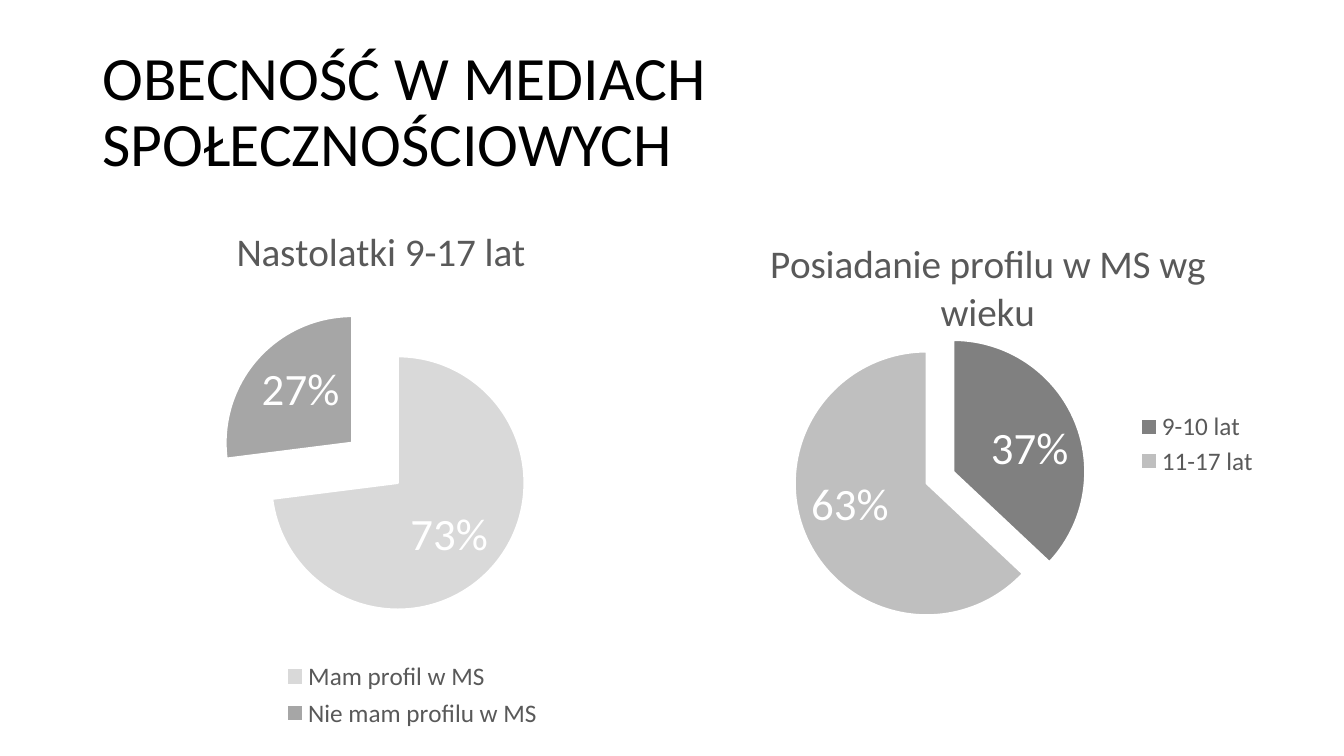
from lxml import etree
from pptx import Presentation
from pptx.chart.data import CategoryChartData
from pptx.dml.color import RGBColor
from pptx.enum import chart as ch, text
from pptx.oxml import ns
from pptx.util import Pt

FONT = "Calibri"
BLACK = RGBColor(0, 0, 0)
WHITE = RGBColor(255, 255, 255)
GREY = RGBColor(0x59, 0x59, 0x59)
PALE = RGBColor(0xD9, 0xD9, 0xD9)
MID = RGBColor(0xA6, 0xA6, 0xA6)
DARK = RGBColor(0x80, 0x80, 0x80)
SOFT = RGBColor(0xBF, 0xBF, 0xBF)


def style(font, size, color):
    font.name, font.size, font.bold = FONT, Pt(size), False
    font.color.rgb = color


def place(part, spot, after=None, inner=False):
    """Fix a chart part at spot, given as shares of the chart: x, y[, w, h]."""
    for old in part.findall(ns.qn("c:layout")):
        part.remove(old)
    layout = etree.Element(ns.qn("c:layout"))
    manual = etree.SubElement(layout, ns.qn("c:manualLayout"))
    rows = [("xMode", "edge"), ("yMode", "edge"), *zip("xywh", spot)]
    if inner:
        rows.insert(0, ("layoutTarget", "inner"))
    for tag, val in rows:
        etree.SubElement(manual, ns.qn("c:" + tag)).set("val", str(val))
    if after:
        part.find(ns.qn(after)).addnext(layout)
    else:
        part.insert(0, layout)


def add_title(slide, box, words):
    title = slide.shapes.title
    title.left, title.top, title.width, title.height = map(Pt, box)
    frame = title.text_frame
    frame.word_wrap = True
    frame.auto_size = text.MSO_AUTO_SIZE.NONE
    frame.vertical_anchor = text.MSO_ANCHOR.MIDDLE
    para = frame.paragraphs[0]
    para.alignment = text.PP_ALIGN.LEFT
    para.line_spacing = 0.9
    run = para.add_run()
    run.text = words
    style(run.font, 44, BLACK)


def add_pie(slide, box, head, parts, burst, spots):
    """Draw a pie of (name, share, colour) parts; spots place title, plot, legend."""
    data = CategoryChartData()
    data.categories = [name for name, _, _ in parts]
    data.add_series("Series 1", [share for _, share, _ in parts])
    chart = slide.shapes.add_chart(
        ch.XL_CHART_TYPE.PIE, *map(Pt, box), data).chart
    style(chart.font, 10, BLACK)

    chart.has_title = True
    run = chart.chart_title.text_frame.paragraphs[0].add_run()
    run.text = head
    style(run.font, 28, GREY)
    chart.chart_title.include_in_layout = False

    chart.has_legend = True
    legend = chart.legend
    legend.position = ch.XL_LEGEND_POSITION.RIGHT
    legend.include_in_layout = False
    style(legend.font, 18, GREY)

    plot = chart.plots[0]
    plot.vary_by_categories = True
    series = plot.series[0]
    for i, (_, _, color) in enumerate(parts):
        form = series.points[i].format
        form.fill.solid()
        form.fill.fore_color.rgb = color
        form.line.color.rgb = WHITE
        form.line.width = Pt(1.5)
    gap = etree.Element(ns.qn("c:explosion"))
    gap.set("val", str(burst))
    series.points[0].format  # slices follow the gap in the series
    series._element.find(ns.qn("c:dPt")).addprevious(gap)

    labels = series.data_labels
    labels.show_percentage = True
    labels.show_value = False
    labels.number_format = "0%"
    labels.number_format_is_linked = False
    labels.position = ch.XL_LABEL_POSITION.INSIDE_END
    style(labels.font, 32, WHITE)

    top, pie, key = spots
    place(chart.chart_title._element, top, "c:tx")
    place(chart._chartSpace.chart.plotArea, pie, inner=True)
    place(legend._element, key, "c:legendPos")


def main():
    deck = Presentation()
    deck.slide_width, deck.slide_height = Pt(960), Pt(540)
    slide = deck.slides.add_slide(deck.slide_layouts[5])
    add_title(slide, (66, 28.75, 860, 104.4),
              "OBECNOŚĆ W MEDIACH SPOŁECZNOŚCIOWYCH")
    add_pie(slide, (66, 144, 408, 381), "Nastolatki 9-17 lat",
            [("Mam profil w MS", 73, PALE), ("Nie mam profilu w MS", 27, MID)],
            24, [(0.24, 0.03), (0.22, 0.16, 0.55, 0.66),
                 (0.31, 0.85, 0.5, 0.15)])
    add_pie(slide, (496, 144, 408, 343), "Posiadanie profilu w MS wg wieku",
            [("9-10 lat", 37, DARK), ("11-17 lat", 63, SOFT)],
            11, [(0.12, 0.06), (0.17, 0.27, 0.52, 0.61),
                 (0.77, 0.43, 0.22, 0.15)])
    deck.save("out.pptx")


if __name__ == "__main__":
    main()
